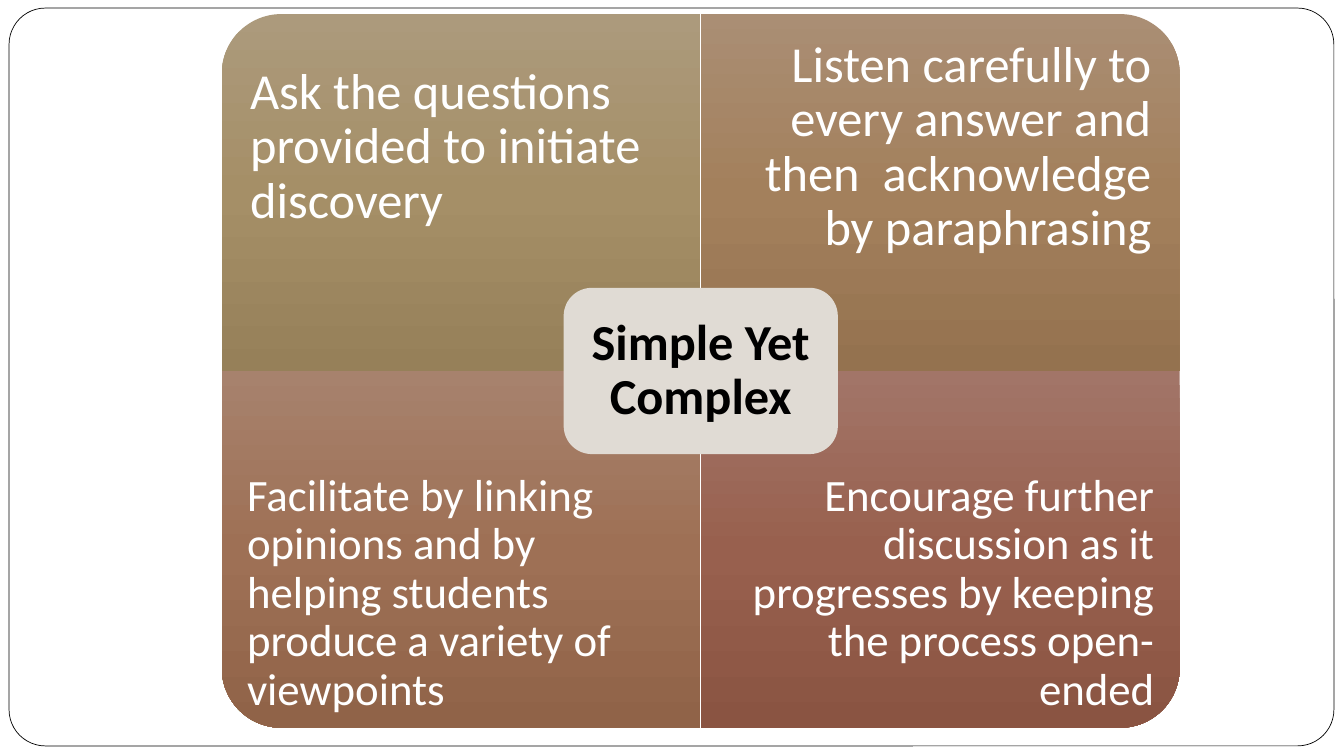
from copy import deepcopy
from dataclasses import dataclass
from math import cos, pi, sin

from pptx import Presentation
from pptx.dml.color import RGBColor
from pptx.enum.shapes import MSO_SHAPE
from pptx.enum.text import MSO_ANCHOR, PP_ALIGN
from pptx.oxml.ns import qn
from pptx.shapes.autoshape import Shape
from pptx.slide import Slide
from pptx.util import Inches, Pt

ROUNDED = MSO_SHAPE.ROUNDED_RECTANGLE
MIDDLE = MSO_ANCHOR.MIDDLE
LEFT, CENTER, RIGHT = PP_ALIGN.LEFT, PP_ALIGN.CENTER, PP_ALIGN.RIGHT


@dataclass(frozen=True)
class Theme:
    font: str = "Calibri"
    large: int = 36
    medium: int = 32
    white: str = "FFFFFF"
    black: str = "000000"
    hub: str = "E0DBD4"
    olive: tuple[str, str, str] = ("AC9A7C", "A58F67", "968059")
    tan: tuple[str, str, str] = ("AA8E74", "A3805C", "94724F")
    sienna: tuple[str, str, str] = ("A7826D", "9E7055", "906348")
    brick: tuple[str, str, str] = ("A27568", "98604E", "8A5442")


@dataclass(frozen=True)
class Label:
    text: str
    size: int
    color: str
    align: PP_ALIGN
    insets: tuple[float, float, float, float]
    bold: bool = False


@dataclass(frozen=True)
class Quadrant:
    side: int
    level: int
    text: str
    gradient: tuple[str, str, str]


THEME = Theme()
CENTER_X, CENTER_Y = 6.95, 3.68
QUADRANT_WIDTH, QUADRANT_HEIGHT = 4.75, 3.54
CORNER_RADIUS = 0.59
ARC_STEPS = 24
HUB_WIDTH, HUB_HEIGHT = 2.72, 1.65

QUADRANTS = (
    Quadrant(-1, -1, "Ask the questions provided to initiate discovery", THEME.olive),
    Quadrant(1, -1, "Listen carefully to every answer and then  acknowledge by paraphrasing", THEME.tan),
    Quadrant(-1, 1, "Facilitate by linking opinions and by helping students produce a variety of viewpoints", THEME.sienna),
    Quadrant(1, 1, "Encourage further discussion as it progresses by keeping the process open-ended", THEME.brick),
)


def write_label(shape: Shape, label: Label) -> None:
    frame = shape.text_frame
    frame.word_wrap = True
    frame.vertical_anchor = MIDDLE
    left, top, right, bottom = map(Inches, label.insets)
    frame.margin_left, frame.margin_top = left, top
    frame.margin_right, frame.margin_bottom = right, bottom
    paragraph = frame.paragraphs[0]
    paragraph.text = label.text
    paragraph.alignment = label.align
    paragraph.line_spacing = 0.9
    paragraph.font.name = THEME.font
    paragraph.font.size = Pt(label.size)
    paragraph.font.bold = label.bold
    paragraph.font.color.rgb = RGBColor.from_string(label.color)


def fill_gradient(shape: Shape, colors: tuple[str, str, str]) -> None:
    shape.fill.gradient()
    shape.fill.gradient_angle = 270
    stop_list = next(shape.element.iter(qn("a:gsLst")))
    stop_list.append(deepcopy(stop_list[-1]))
    for stop, color, position in zip(shape.fill.gradient_stops, colors, (0, 0.5, 1)):
        stop.color.rgb = RGBColor.from_string(color)
        stop.position = position


def add_rounded(
    slide: Slide, left: float, top: float, width: float, height: float, fill: str, radius: float
) -> Shape:
    shape = slide.shapes.add_shape(ROUNDED, Inches(left), Inches(top), Inches(width), Inches(height))
    shape.adjustments[0] = radius / min(width, height)
    shape.shadow.inherit = False
    shape.fill.solid()
    shape.fill.fore_color.rgb = RGBColor.from_string(fill)
    shape.line.fill.background()
    return shape


def add_frame(slide: Slide) -> None:
    frame = add_rounded(slide, 0.09, 0.08, 13.14, 7.32, THEME.white, 0.36)
    frame.line.color.rgb = RGBColor.from_string(THEME.black)
    frame.line.width = Pt(0.5)


def add_quadrant(slide: Slide, quadrant: Quadrant) -> None:
    outer_x = CENTER_X + quadrant.side * QUADRANT_WIDTH
    outer_y = CENTER_Y + quadrant.level * QUADRANT_HEIGHT
    angles = [step * pi / 2 / ARC_STEPS for step in range(ARC_STEPS + 1)]
    corner = [
        (
            outer_x - quadrant.side * CORNER_RADIUS * (1 - cos(angle)),
            outer_y - quadrant.level * CORNER_RADIUS * (1 - sin(angle)),
        )
        for angle in angles
    ]
    outline = [(outer_x, CENTER_Y), *corner, (CENTER_X, outer_y)]
    builder = slide.shapes.build_freeform(Inches(CENTER_X), Inches(CENTER_Y))
    builder.add_line_segments([(Inches(x), Inches(y)) for x, y in outline], close=True)
    shape = builder.convert_to_shape()
    shape.shadow.inherit = False
    shape.line.fill.background()
    fill_gradient(shape, quadrant.gradient)
    is_top = quadrant.level < 0
    size = THEME.large if is_top else THEME.medium
    insets = (0.28, 0.28, 0.28, 1.17) if is_top else (0.25, 1.13, 0.25, 0.25)
    align = LEFT if quadrant.side < 0 else RIGHT
    write_label(shape, Label(quadrant.text, size, THEME.white, align, insets))


def add_hub(slide: Slide) -> None:
    left, top = CENTER_X - HUB_WIDTH / 2, CENTER_Y - HUB_HEIGHT / 2
    hub = add_rounded(slide, left, top, HUB_WIDTH, HUB_HEIGHT, THEME.hub, 0.28)
    insets = (0.15, 0.15, 0.15, 0.15)
    write_label(hub, Label("Simple Yet Complex", THEME.large, THEME.black, CENTER, insets, bold=True))


def main() -> None:
    presentation = Presentation()
    presentation.slide_width = Inches(13.33)
    presentation.slide_height = Inches(7.5)
    slide = presentation.slides.add_slide(presentation.slide_layouts[6])
    add_frame(slide)
    for quadrant in QUADRANTS:
        add_quadrant(slide, quadrant)
    add_hub(slide)
    presentation.save("out.pptx")


if __name__ == "__main__":
    main()
